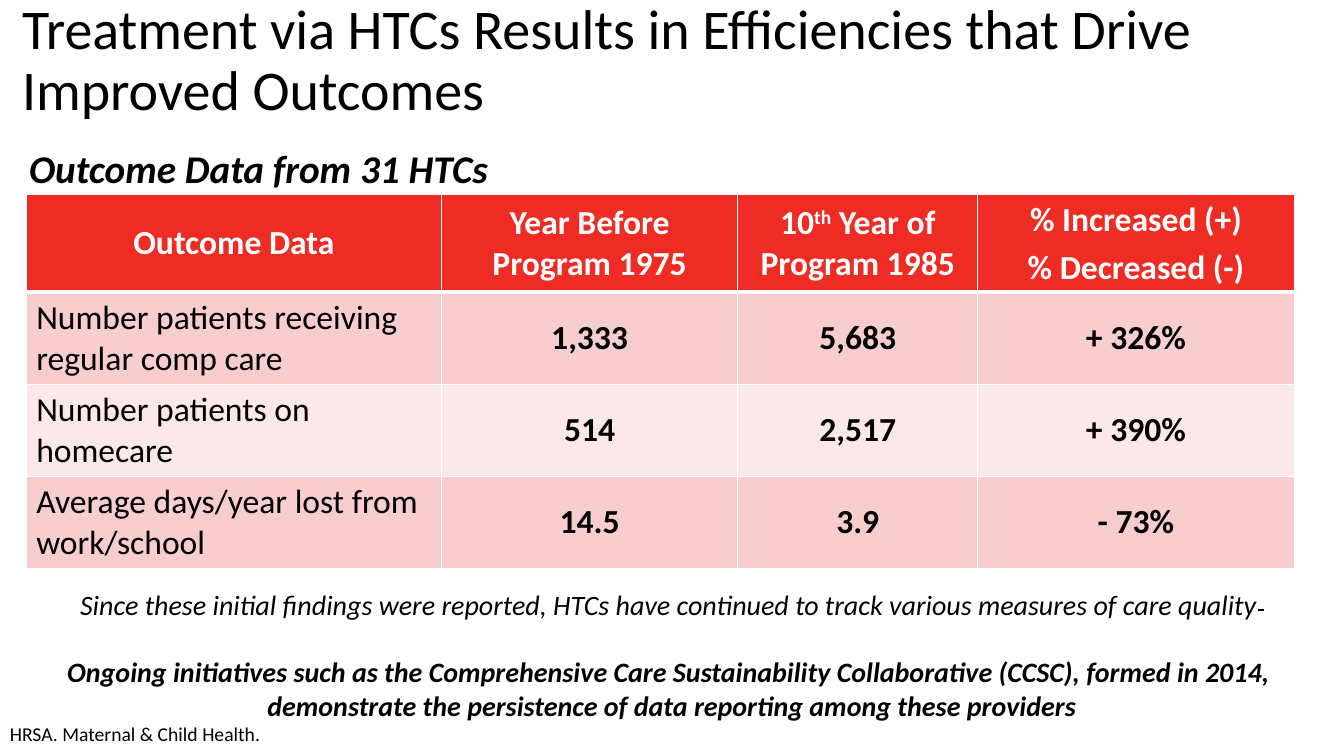
from lxml import etree
from pptx import Presentation
from pptx import util as u
from pptx.dml.color import RGBColor
from pptx.enum import text
from pptx.oxml.ns import qn

BLACK = RGBColor(0x00, 0x00, 0x00)
WHITE = RGBColor(0xFF, 0xFF, 0xFF)
RED = RGBColor(0xEE, 0x2C, 0x24)
PINK = RGBColor(0xF8, 0xCD, 0xCD)
PALE_PINK = RGBColor(0xFC, 0xE8, 0xE8)

CENTER = text.PP_ALIGN.CENTER
MIDDLE = text.MSO_ANCHOR.MIDDLE
SUPERSCRIPT = {"baseline": "30000"}
STRUCK = {"strike": "sngStrike"}
LINE_BREAK = "\n"

HEADERS = [
    ["Outcome Data"],
    ["Year Before Program 1975"],
    [["10", ("th", SUPERSCRIPT), " Year of Program 1985"]],
    ["% Increased (+)", "% Decreased (-)"],
]
OUTCOMES = [
    ("Number patients receiving regular comp care", "1,333", "5,683", "+ 326%"),
    ("Number patients on homecare", "514", "2,517", "+ 390%"),
    ("Average days/year lost from work/school", "14.5", "3.9", "- 73%"),
]


class SlideBuilder:
    """Places elements on a grid of 40 columns by 30 rows."""

    FONT = "Calibri"

    def __init__(self, presentation):
        self.column = presentation.slide_width / 40
        self.row = presentation.slide_height / 30
        self.slide = presentation.slides.add_slide(presentation.slide_layouts[6])

    def across(self, columns):
        return u.Emu(round(columns * self.column))

    def down(self, rows):
        return u.Emu(round(rows * self.row))

    def box(self, left, top, width, height):
        return self.across(left), self.down(top), self.across(width), self.down(height)

    def fill_text(self, frame, paragraphs, size, color=BLACK, layout=None, gap=0, **style):
        """Each paragraph is a string or a list of runs; a run may carry XML attributes."""
        font_format = {"name": self.FONT, "size": u.Pt(size), **style}
        for index, runs in enumerate(paragraphs):
            paragraph = frame.add_paragraph() if index else frame.paragraphs[0]
            if index and gap:
                paragraph.space_before = u.Pt(gap)
            for name, value in (layout or {}).items():
                setattr(paragraph, name, value)
            for item in [runs] if isinstance(runs, str) else runs:
                if item == LINE_BREAK:
                    paragraph.add_line_break()
                    continue
                words, attributes = (item, {}) if isinstance(item, str) else item
                run = paragraph.add_run()
                run.text = words
                run.font.color.rgb = color
                for name, value in font_format.items():
                    setattr(run.font, name, value)
                for name, value in attributes.items():
                    run._r.get_or_add_rPr().set(name, value)

    def text_box(self, place, paragraphs, size, frame_format=None, **style):
        frame = self.slide.shapes.add_textbox(*self.box(*place)).text_frame
        for name, value in {"word_wrap": True, **(frame_format or {})}.items():
            setattr(frame, name, value)
        self.fill_text(frame, paragraphs, size, **style)
        return frame

    def border(self, cell, bottom_width):
        properties = cell._tc.get_or_add_tcPr()
        widths = {"a:lnL": 1, "a:lnR": 1, "a:lnT": 1, "a:lnB": bottom_width}
        for index, (tag, width) in enumerate(widths.items()):
            line = etree.Element(qn(tag), w=str(int(u.Pt(width))))
            fill = etree.SubElement(line, qn("a:solidFill"))
            etree.SubElement(fill, qn("a:srgbClr"), val=str(WHITE))
            properties.insert(index, line)

    def cell(self, cell, paragraphs, fill, bottom_width=1, **style):
        cell.fill.solid()
        cell.fill.fore_color.rgb = fill
        cell.vertical_anchor = MIDDLE
        self.border(cell, bottom_width)
        self.fill_text(cell.text_frame, paragraphs, 24, gap=4.8, **style)

    def table(self, left, top, widths, heights):
        place = self.box(left, top, sum(widths), sum(heights))
        table = self.slide.shapes.add_table(len(heights), len(widths), *place).table
        for column, width in zip(table.columns, widths):
            column.width = self.across(width)
        for row, height in zip(table.rows, heights):
            row.height = self.down(height)
        return table


def main():
    presentation = Presentation()
    presentation.slide_width = u.Inches(13.33)
    presentation.slide_height = u.Inches(7.5)
    builder = SlideBuilder(presentation)

    builder.text_box(
        (0.36, 0.44, 35.5, 4.04),
        ["Treatment via HTCs Results in Efficiencies that Drive Improved Outcomes"],
        40, {"vertical_anchor": MIDDLE}, layout={"line_spacing": 0.9})

    table = builder.table(0.78, 7.72, [12.36, 8.82, 7.14, 9.42], [3.88] + [3.65] * 3)
    centered = {"alignment": CENTER}
    for column, header in enumerate(HEADERS):
        builder.cell(table.cell(0, column), header, RED, bottom_width=3,
                     color=WHITE, layout=centered, bold=True)
    for row, outcome in enumerate(OUTCOMES, start=1):
        for column, value in enumerate(outcome):
            builder.cell(table.cell(row, column), [value], PINK if row % 2 else PALE_PINK,
                         layout=centered if column else None, bold=column > 0)

    builder.text_box((0.57, 5.52, 26.76, 2.28), ["Outcome Data from 31 HTCs"], 28,
                     bold=True, italic=True)
    builder.text_box(
        (0, 28.24, 8.13, 1.76), ["HRSA. Maternal & Child Health."], 14,
        {"word_wrap": False, "margin_top": u.Inches(0.1), "margin_bottom": u.Inches(0.1)})

    findings = builder.text_box(
        (0, 23.12, 40, 5.8),
        [["Since these initial findings were reported, HTCs have continued to track "
          "various measures of care quality", (" ", STRUCK)],
         ["Ongoing initiatives such as the Comprehensive Care Sustainability Collaborative "
          "(CCSC), formed in 2014, ", LINE_BREAK,
          "demonstrate the persistence of data reporting among these providers"]],
        20, layout=centered, gap=24, italic=True)
    for run in findings.paragraphs[1].runs:
        run.font.bold = True

    presentation.save("out.pptx")


if __name__ == "__main__":
    main()
